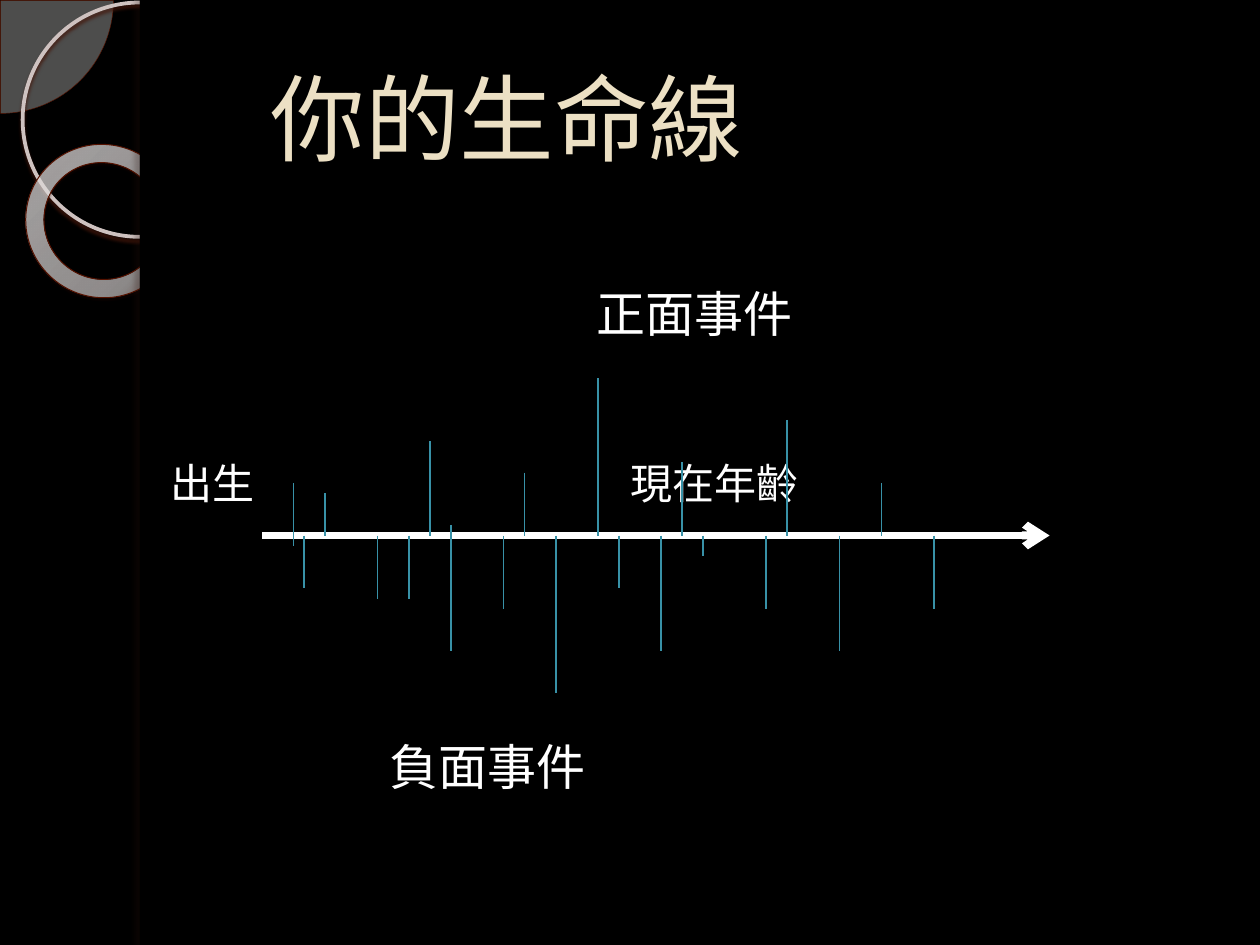
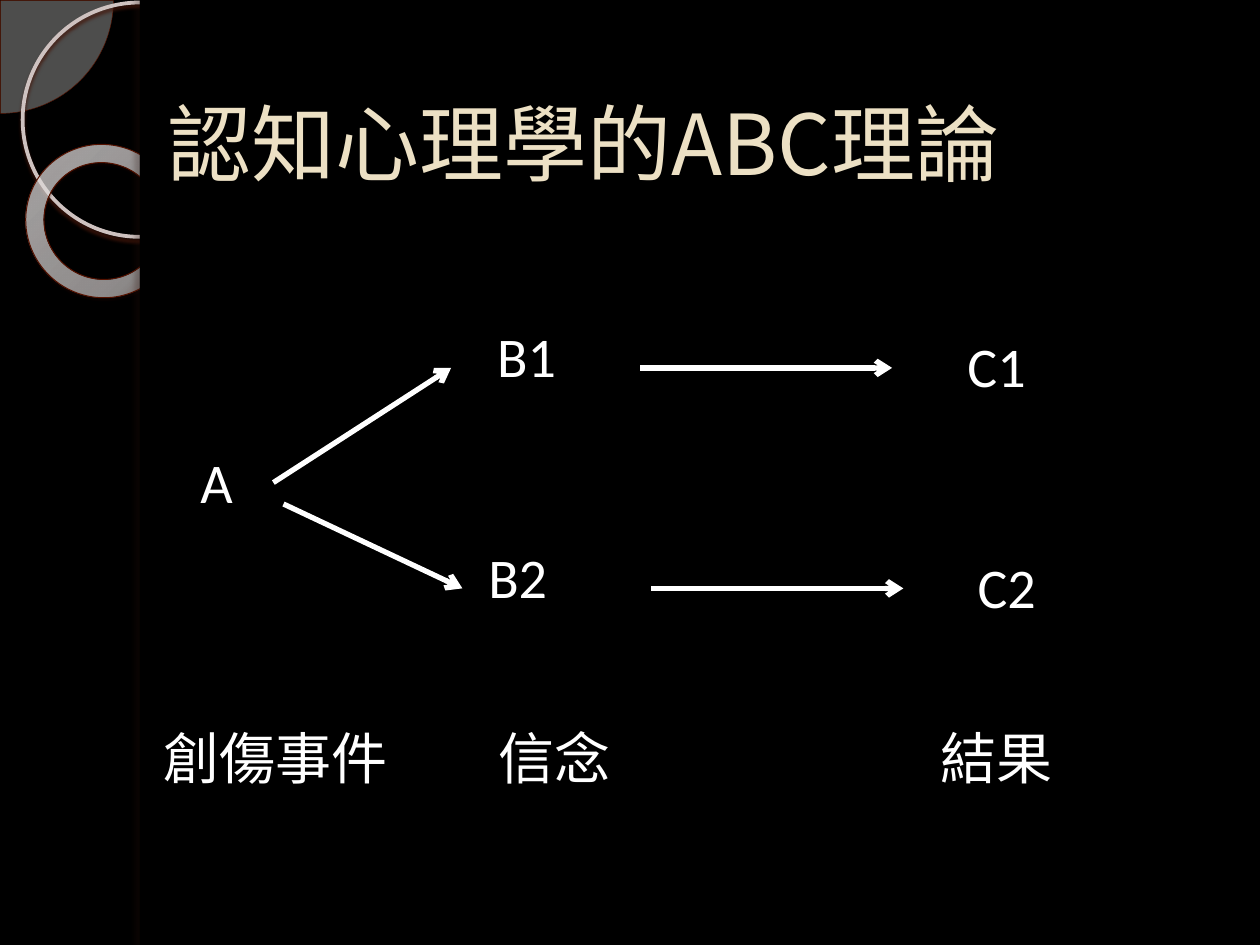
from lxml import etree
from pptx import Presentation
from pptx.dml.color import RGBColor
from pptx.enum import shapes, text
from pptx.oxml import parse_xml
from pptx.oxml.ns import nsdecls, qn
from pptx.util import Inches, Pt

COLORS = {
    "ground": "000000", "title": "ECE0C4", "white": "FFFFFF", "tick": "3891A7",
    "pie": "ECEAE9", "pie_line": "591502", "ring": "CEC2C0", "ring_shadow": "44170B",
    "donut_line": "561200", "donut_shadow": "260901", "edge_shadow": "29130D",
    "glow_start": "F4F2F2", "glow_mid": "F9F8F8", "glow_end": "5E1400",
}
CJK_TITLE, CJK_BODY, LATIN = "Noto Sans CJK SC", "Noto Sans CJK JP", "Calibri"
SHAPE = shapes.MSO_SHAPE
UNIT = 1 / 12  # grid step of the life line, in inches


def color(name):
    return RGBColor.from_string(COLORS[name])


def apply(target, values):
    for name, value in values.items():
        setattr(target, name, value)


def add_alpha(parent, percent):
    for tint in parent.iter(qn("a:srgbClr")):
        etree.SubElement(tint, qn("a:alpha")).set("val", str(percent * 1000))


def add_shadow(shape, name, percent, blur, distance, angle):
    effects = shape._element.spPr.find(qn("a:effectLst"))
    effects.append(parse_xml(
        f'<a:outerShdw {nsdecls("a")} blurRad="{Pt(blur)}" dist="{Pt(distance)}" '
        f'dir="{angle * 60000}" algn="tl" rotWithShape="0">'
        f'<a:srgbClr val="{COLORS[name]}"/></a:outerShdw>'))
    add_alpha(effects, percent)


def add_figure(page, kind, box, fill=None, line=None, width=0):
    figure = page.shapes.add_shape(kind, *map(Inches, box))
    figure.shadow.inherit = False
    if fill:
        figure.fill.solid()
        figure.fill.fore_color.rgb = color(fill)
    else:
        figure.fill.background()
    if line:
        figure.line.color.rgb = color(line)
        figure.line.width = Pt(width)
    else:
        figure.line.fill.background()
    return figure


def glow_fill(figure):
    """Give the figure a translucent circular gradient."""
    stops = [(0, "glow_start", 70), (70, "glow_mid", 55), (100, "glow_end", 60)]
    marks = "".join(
        f'<a:gs pos="{place * 1000}"><a:srgbClr val="{COLORS[name]}">'
        f'<a:alpha val="{alpha * 1000}"/></a:srgbClr></a:gs>' for place, name, alpha in stops)
    properties = figure._element.spPr
    properties.replace(properties.find(qn("a:noFill")), parse_xml(
        f'<a:gradFill {nsdecls("a")} rotWithShape="1"><a:gsLst>{marks}</a:gsLst>'
        '<a:path path="circle"><a:fillToRect l="-408000" t="-50000" r="508000" b="150000"/>'
        '</a:path></a:gradFill>'))


def decorate_layout(layout, page):
    """Draw the shared side band on a page, then move it into the layout."""
    layout.background.fill.solid()
    layout.background.fill.fore_color.rgb = color("ground")

    # Quarter disc, thin ring and thick ring
    pie = add_figure(page, SHAPE.PIE, (-0.89, -0.89, 1.79, 1.79), "pie", "pie_line", 0.25)
    pie.adjustments[0], pie.adjustments[1] = 0, 54
    add_alpha(pie._element.spPr.find(qn("a:solidFill")), 33)
    ring = add_figure(page, SHAPE.OVAL, (0.18, 0.02, 1.86, 1.86), None, "ring", 2.15)
    add_shadow(ring, "ring_shadow", 85, 2, 2, 90)
    donut = add_figure(page, SHAPE.DONUT, (0.2, 1.15, 1.23, 1.21), None, "donut_line", 0.58)
    donut.adjustments[0] = 0.12
    donut.rotation = 38.6
    glow_fill(donut)
    add_shadow(donut, "donut_shadow", 35, 1, 1.2, 75)

    # Content panel and its shaded edge
    panel = add_figure(page, SHAPE.RECTANGLE, (1.11, 0, 8.89, 7.5), "ground")
    edge = add_figure(page, SHAPE.RECTANGLE, (1.11, 0, 0.08, 7.5), "ground")
    add_shadow(edge, "edge_shadow", 25, 3, 3, 180)

    for place, figure in enumerate((pie, ring, donut, panel, edge), start=2):
        layout.shapes._spTree.insert(place, figure._element)


def write(frame, words, size, name, font, align):
    frame.text = words
    para = frame.paragraphs[0]
    para.alignment = align
    span = para.runs[0]
    apply(span.font, {"size": Pt(size), "name": font})
    span.font.color.rgb = color(name)
    etree.SubElement(span.font._element, qn("a:ea")).set("typeface", font)


def set_title(page, words, box, size, indent):
    title = page.shapes.title
    apply(title, dict(zip(("left", "top", "width", "height"), map(Inches, box))))
    apply(title.text_frame, {"margin_left": Inches(indent), "word_wrap": True,
                             "vertical_anchor": text.MSO_ANCHOR.MIDDLE})
    write(title.text_frame, words, size, "title", CJK_TITLE, text.PP_ALIGN.LEFT)


def add_label(page, words, x, y, size, font=CJK_BODY):
    """Centre a one-line label on the point x, y."""
    width, height = 2.4, 0.64
    label = page.shapes.add_textbox(
        *map(Inches, (x - width / 2, y - height / 2, width, height)))
    apply(label.text_frame, {"word_wrap": True, "vertical_anchor": text.MSO_ANCHOR.MIDDLE})
    write(label.text_frame, words, size, "white", font, text.PP_ALIGN.CENTER)


def add_line(page, start, end, name, width, arrow=False):
    line = page.shapes.add_connector(
        shapes.MSO_CONNECTOR.STRAIGHT, *map(Inches, (*start, *end)))
    line.line.color.rgb = color(name)
    line.line.width = Pt(width)
    if arrow:
        etree.SubElement(line.line._get_or_add_ln(), qn("a:tailEnd")).set("type", "arrow")
    etree.SubElement(line._element.spPr, qn("a:effectLst"))


def draw_life_line(page, left, top):
    """Life line starting at left, top with its events above and below."""
    for words, x, y, size in [("正面事件", 3.43, -1.77, 28), ("出生", -0.39, -0.42, 24),
                              ("現在年齡", 3.59, -0.42, 24), ("負面事件", 1.79, 1.83, 28)]:
        add_label(page, words, left + x, top + y, size)

    add_line(page, (left, top), (left + 75 * UNIT, top), "white", 4.5, arrow=True)

    # Events: steps along the line, steps above it, steps below it
    events = [(3, 5, 1), (4, 0, 5), (6, 4, 0), (11, 0, 6), (14, 0, 6), (16, 9, 0),
              (18, 1, 11), (23, 0, 7), (25, 6, 0), (28, 0, 15), (32, 15, 0),
              (34, 0, 5), (38, 0, 11), (40, 7, 0), (42, 0, 2), (48, 0, 7),
              (50, 11, 0), (55, 0, 11), (59, 5, 0), (64, 0, 7)]
    for step, above, below in events:
        x = left + step * UNIT
        add_line(page, (x, top - above * UNIT), (x, top + below * UNIT), "tick", 0.75)


def draw_abc_model(page, left, top):
    """Event, beliefs and results, with a caption under each column."""
    nodes = [("A", 0.72, 1.32), ("B1", 3.18, 0.32), ("B2", 3.11, 2.07),
             ("C1", 6.91, 0.4), ("C2", 6.99, 2.15)]
    for words, x, y in nodes:
        add_label(page, words, left + x, top + y, 32, LATIN)

    arrows = [(1.17, 1.33, 2.58, 0.42), (1.25, 1.5, 2.67, 2.17),
              (4.08, 0.42, 6.08, 0.42), (4.17, 2.17, 6.17, 2.17)]
    for x1, y1, x2, y2 in arrows:
        add_line(page, (left + x1, top + y1), (left + x2, top + y2), "white", 3, arrow=True)

    for words, x in [("創傷事件", 1.19), ("信念", 3.4), ("結果", 6.91)]:
        add_label(page, words, left + x, top + 3.51, 32)


def main():
    deck = Presentation()
    deck.slide_width, deck.slide_height = Inches(10), Inches(7.5)
    layout = deck.slide_layouts[5]

    life_page = deck.slides.add_slide(layout)
    decorate_layout(layout, life_page)
    set_title(life_page, "你的生命線", (1.57, 0.3, 8.2, 1.25), 54, 0.58)
    draw_life_line(life_page, 2.08, 4.25)

    abc_page = deck.slides.add_slide(layout)
    set_title(abc_page, "認知心理學的ABC理論", (0.5, 0.5, 9, 1.25), 48, 0.83)
    draw_abc_model(abc_page, 1, 2.5)

    deck.save("out.pptx")


if __name__ == "__main__":
    main()
